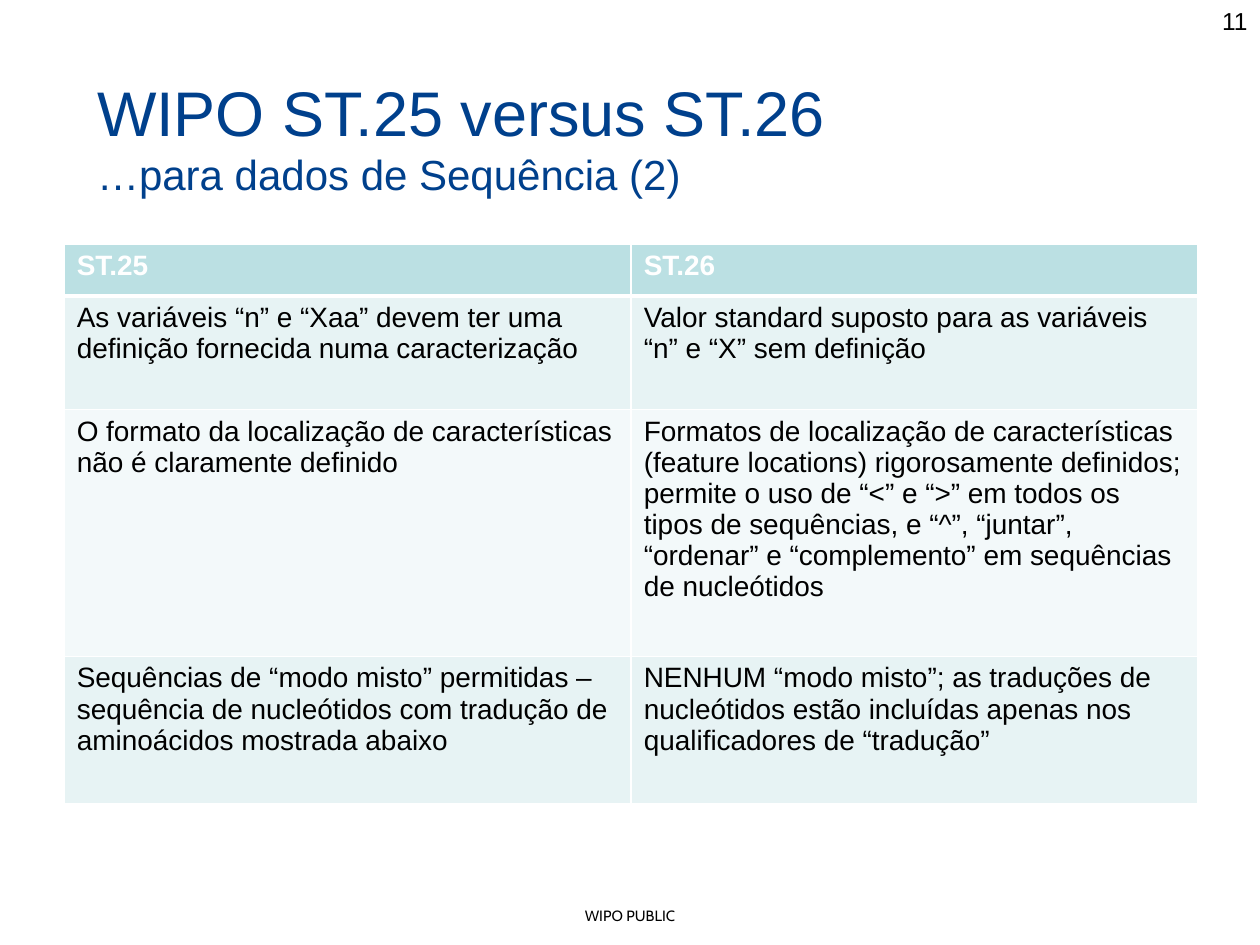
"""Build the slide comparing WIPO ST.25 and ST.26 for sequence data."""
from dataclasses import dataclass

from lxml import etree
from pptx import Presentation
from pptx.dml.color import RGBColor
from pptx.enum.text import MSO_ANCHOR, MSO_AUTO_SIZE, PP_ALIGN
from pptx.oxml.ns import qn
from pptx.util import Inches, Pt

LEFT, CENTER, RIGHT = PP_ALIGN.LEFT, PP_ALIGN.CENTER, PP_ALIGN.RIGHT
TOP = MSO_ANCHOR.TOP
NO_AUTOFIT = MSO_AUTO_SIZE.NONE
TITLE_ONLY = 5


@dataclass(frozen=True)
class Theme:
    font: str = "Arial"
    footer_font: str = "Cabin"
    blue: str = "00408C"
    black: str = "000000"
    white: str = "FFFFFF"
    header_fill: str = "BBE0E3"
    band_fills: tuple = ("E7F3F4", "F3F9FA")
    title_size: float = 36
    subtitle_size: float = 24
    table_size: float = 16
    number_size: float = 14
    footer_size: float = 8.5


theme = Theme()


def format_runs(paragraph, size, color, font=theme.font, bold=False, align=LEFT):
    paragraph.alignment = align
    for run in paragraph.runs:
        run.font.name = font
        run.font.size = Pt(size)
        run.font.bold = bold
        run.font.color.rgb = RGBColor.from_string(color)


def add_border(cell, side, width):
    properties = cell._tc.get_or_add_tcPr()
    line = etree.SubElement(properties, qn(f"a:ln{side}"), w=str(Pt(width)))
    fill = etree.SubElement(line, qn("a:solidFill"))
    etree.SubElement(fill, qn("a:srgbClr"), val=theme.white)


presentation = Presentation()
presentation.slide_width = Inches(10)
presentation.slide_height = Inches(7.5)
slide = presentation.slides.add_slide(presentation.slide_layouts[TITLE_ONLY])

title = slide.shapes.title
title.left, title.top = Inches(0.67), Inches(0.47)
title.width, title.height = Inches(9), Inches(1.25)
title_frame = title.text_frame
title_frame.text = "WIPO ST.25 versus ST.26\n…para dados de Sequência (2)"
title_frame.auto_size = NO_AUTOFIT
title_frame.vertical_anchor = TOP
title_frame.margin_top = Inches(0.11)
for paragraph, size in zip(
    title_frame.paragraphs, (theme.title_size, theme.subtitle_size)
):
    format_runs(paragraph, size, theme.blue)

labels = [
    ("WIPO PUBLIC", (0, 7.15, 10, 0.24), theme.footer_size, theme.footer_font, CENTER),
    ("11", (7.67, 0, 2.33, 0.52), theme.number_size, theme.font, RIGHT),
]
for text, box, size, font, align in labels:
    label = slide.shapes.add_textbox(*map(Inches, box))
    label.text_frame.word_wrap = True
    label.text_frame.text = text
    format_runs(label.text_frame.paragraphs[0], size, theme.black, font, align=align)

rows = [
    (0.41, "ST.25", "ST.26"),
    (
        0.9,
        "As variáveis “n” e “Xaa” devem ter uma definição fornecida numa caracterização",
        "Valor standard suposto para as variáveis “n” e “X” sem definição",
    ),
    (
        1.96,
        "O formato da localização de características não é claramente definido",
        "Formatos de localização de características (feature locations) rigorosamente "
        "definidos; permite o uso de “<” e “>” em todos os tipos de sequências, e “^”, "
        "“juntar”, “ordenar” e “complemento” em sequências de nucleótidos",
    ),
    (
        1.17,
        "Sequências de “modo misto” permitidas – sequência de nucleótidos com tradução "
        "de aminoácidos mostrada abaixo",
        "NENHUM “modo misto”; as traduções de nucleótidos estão incluídas apenas nos "
        "qualificadores de “tradução”",
    ),
]
table = slide.shapes.add_table(
    len(rows), 2, Inches(0.51), Inches(1.94), Inches(9), Inches(4.44)
).table
for column in table.columns:
    column.width = Inches(4.5)
for row_index, (height, *texts) in enumerate(rows):
    table.rows[row_index].height = Inches(height)
    is_header = row_index == 0
    fill_color = theme.header_fill if is_header else theme.band_fills[(row_index - 1) % 2]
    text_color = theme.white if is_header else theme.black
    for column_index, text in enumerate(texts):
        cell = table.cell(row_index, column_index)
        for side in "LRTB":
            touches_header_rule = (row_index, side) in ((0, "B"), (1, "T"))
            add_border(cell, side, 3 if touches_header_rule else 1)
        cell.fill.solid()
        cell.fill.fore_color.rgb = RGBColor.from_string(fill_color)
        cell.text_frame.text = text
        format_runs(
            cell.text_frame.paragraphs[0], theme.table_size, text_color, bold=is_header
        )

presentation.save("out.pptx")
